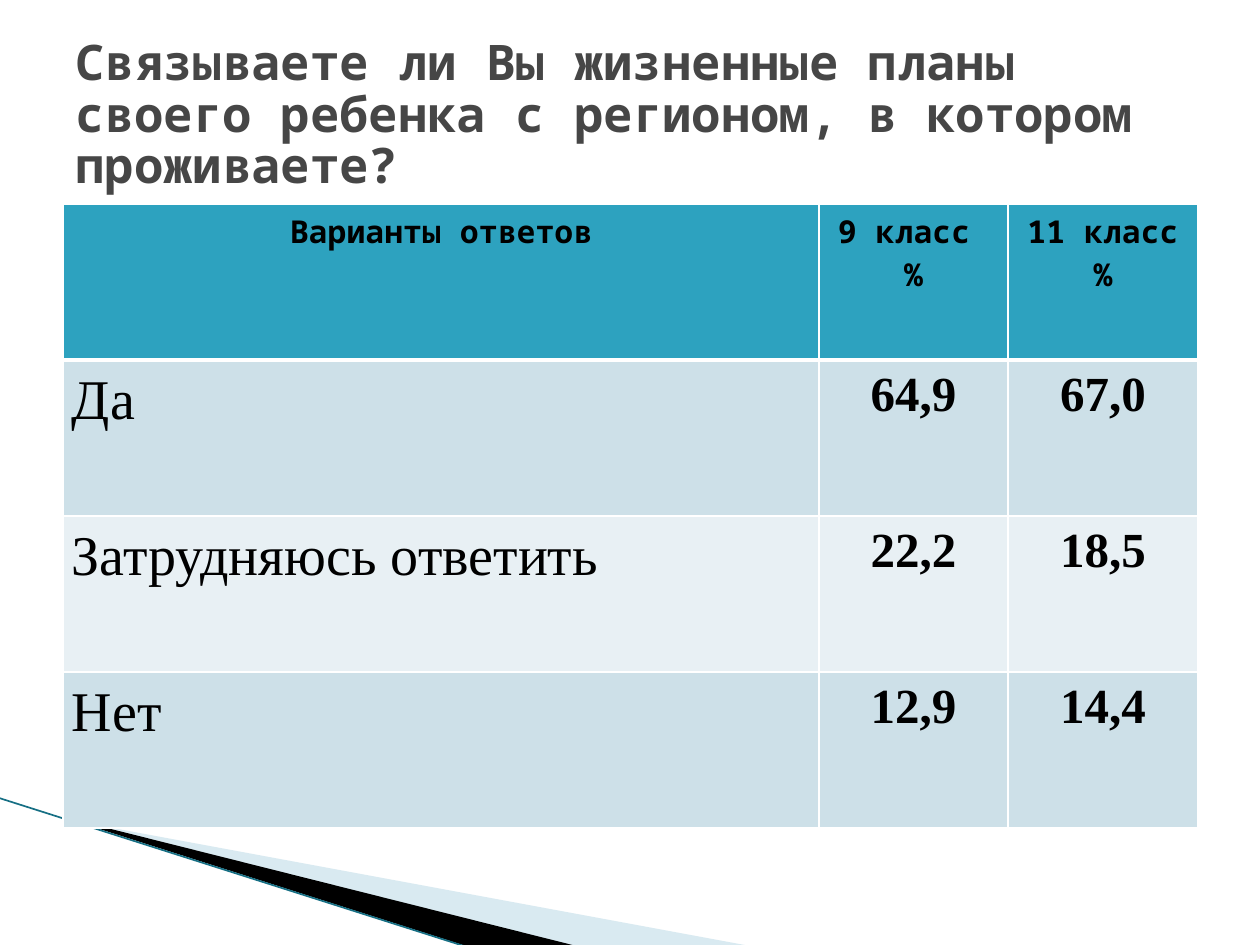
"""Build a survey slide with a title, an answers table and corner wedges."""
from dataclasses import dataclass
from typing import Optional

from lxml.etree import SubElement
from pptx import Presentation
from pptx.dml.color import RGBColor
from pptx.enum.shapes import MSO_CONNECTOR as Connector
from pptx.enum.text import MSO_ANCHOR as Anchor, PP_ALIGN as Align
from pptx.oxml.ns import qn
from pptx.util import Pt

EMU_PER_PX = 914400 / 126
MONO, SERIF = "Noto Sans Mono", "Times New Roman"
COLUMN_WIDTHS = (756, 189, 190)
ROW_HEIGHT = 156
HEADINGS = ("Варианты ответов", "9 класс \n%", "11 класс\n%")
ANSWERS = (
    ("Да", "64,9", "67,0"),
    ("Затрудняюсь ответить", "22,2", "18,5"),
    ("Нет", "12,9", "14,4"),
)
ANSWER_FILLS = ("CDE0E8", "E8F0F4")


@dataclass(frozen=True)
class Wedge:
    points: tuple
    color: str
    opacity: Optional[int] = None


WEDGES = (
    Wedge(((69, 820), (750, 946), (575, 946), (69, 819)), "A0CBDC", 40),
    Wedge(((67, 818), (576, 946), (469, 947), (68, 819)), "000000"),
)


def px(length: int) -> int:
    return round(length * EMU_PER_PX)


def rgb(color: str) -> RGBColor:
    return RGBColor.from_string(color)


def write(frame, text: str, *, size: int, font: str = MONO, color: str = "000000",
          bold: bool = True, align=Align.LEFT, spacing: Optional[float] = None) -> None:
    frame.word_wrap = True
    for index, line in enumerate(text.split("\n")):
        paragraph = frame.paragraphs[0] if index == 0 else frame.add_paragraph()
        paragraph.alignment = align
        paragraph.line_spacing = spacing
        run = paragraph.add_run()
        run.text = line
        run.font.name, run.font.size, run.font.bold = font, Pt(size), bold
        run.font.color.rgb = rgb(color)


def draw_wedge(shapes, wedge: Wedge) -> None:
    start, *others = wedge.points
    builder = shapes.build_freeform(*start, scale=EMU_PER_PX)
    builder.add_line_segments(others, close=True)
    shape = builder.convert_to_shape()
    shape.shadow.inherit = False
    shape.line.fill.background()
    shape.fill.solid()
    shape.fill.fore_color.rgb = rgb(wedge.color)
    if wedge.opacity is not None:
        fill_color = shape.element.spPr.find(f"{qn('a:solidFill')}/{qn('a:srgbClr')}")
        SubElement(fill_color, qn("a:alpha"), val=str(wedge.opacity * 1000))


def draw_edge(shapes) -> None:
    edge = shapes.add_connector(Connector.STRAIGHT, px(-1), px(798), px(467), px(947))
    edge.line.color.rgb = rgb("166F84")
    edge.line.width = Pt(0.95)
    SubElement(edge.element.spPr, qn("a:effectLst"))


def style_cell(cell, fill: str, bottom_width: int = 1, top_width: int = 1) -> None:
    properties = cell._tc.get_or_add_tcPr()
    for side, width in (("L", 1), ("R", 1), ("T", top_width), ("B", bottom_width)):
        border = SubElement(properties, qn(f"a:ln{side}"), w=str(Pt(width)))
        SubElement(SubElement(border, qn("a:solidFill")), qn("a:srgbClr"), val="FFFFFF")
    cell.fill.solid()
    cell.fill.fore_color.rgb = rgb(fill)


def draw_answers(shapes) -> None:
    row_count = len(ANSWERS) + 1
    table = shapes.add_table(row_count, len(HEADINGS), px(63), px(204),
                             px(sum(COLUMN_WIDTHS)), px(ROW_HEIGHT * row_count)).table
    for column, width in zip(table.columns, COLUMN_WIDTHS):
        column.width = px(width)
    for row in table.rows:
        row.height = px(ROW_HEIGHT)
    for column, heading in enumerate(HEADINGS):
        cell = table.cell(0, column)
        style_cell(cell, "2DA2BF", bottom_width=3)
        write(cell.text_frame, heading, size=18, align=Align.CENTER)
    for row, answer in enumerate(ANSWERS, start=1):
        for column, value in enumerate(answer):
            cell = table.cell(row, column)
            style_cell(cell, ANSWER_FILLS[(row - 1) % 2], top_width=3 if row == 1 else 1)
            cell.margin_left = cell.margin_right = px(9)
            cell.margin_top = cell.margin_bottom = 0
            is_label = column == 0
            write(cell.text_frame, value, size=32 if is_label else 28, font=SERIF,
                  bold=not is_label, spacing=1.15,
                  align=Align.JUSTIFY if is_label else Align.CENTER)


def draw_title(shapes) -> None:
    frame = shapes.add_textbox(px(63), px(38), px(1134), px(157)).text_frame
    frame.vertical_anchor = Anchor.MIDDLE
    write(frame, "Связываете ли Вы жизненные планы своего ребенка с регионом, "
          "в котором проживаете?", size=28, color="464646", spacing=0.88)


def main() -> None:
    deck = Presentation()
    deck.slide_width, deck.slide_height = px(1260), px(945)
    shapes = deck.slides.add_slide(deck.slide_layouts[6]).shapes
    for wedge in WEDGES:
        draw_wedge(shapes, wedge)
    draw_edge(shapes)
    draw_answers(shapes)
    draw_title(shapes)
    deck.save("out.pptx")


if __name__ == "__main__":
    main()
